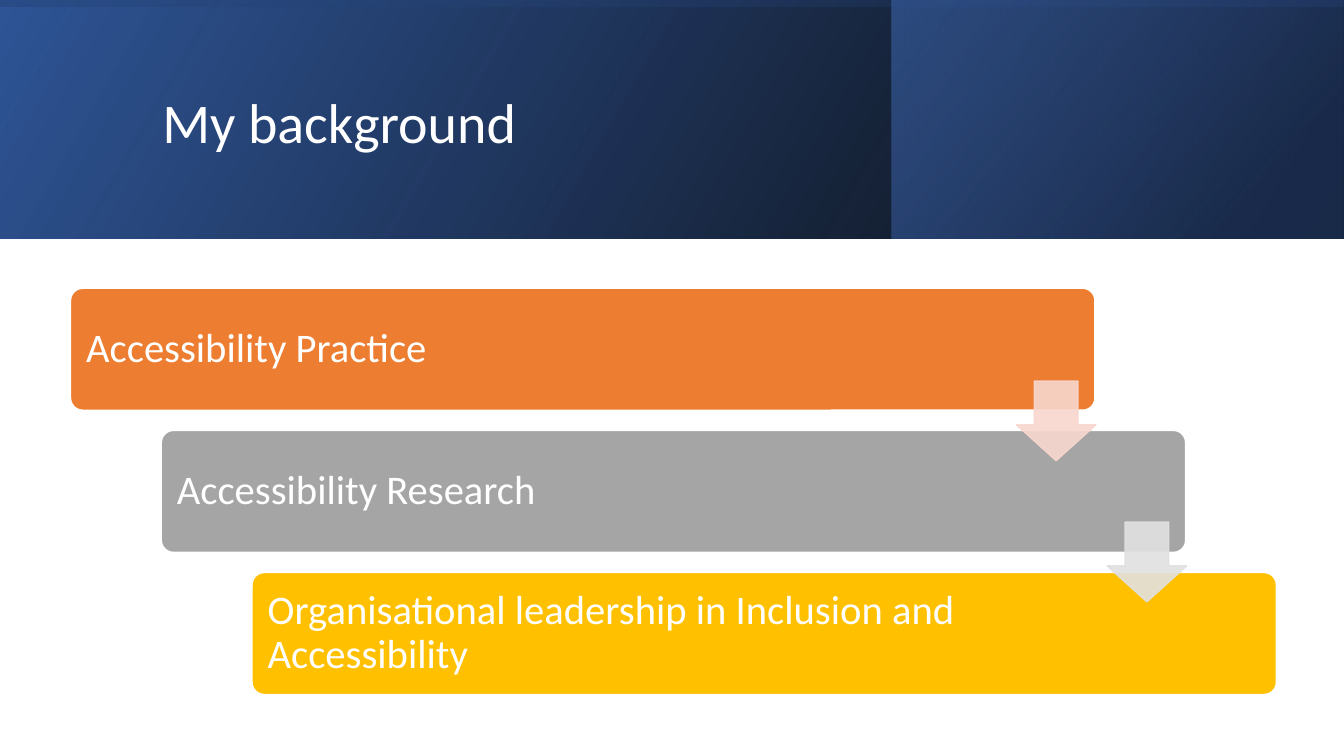
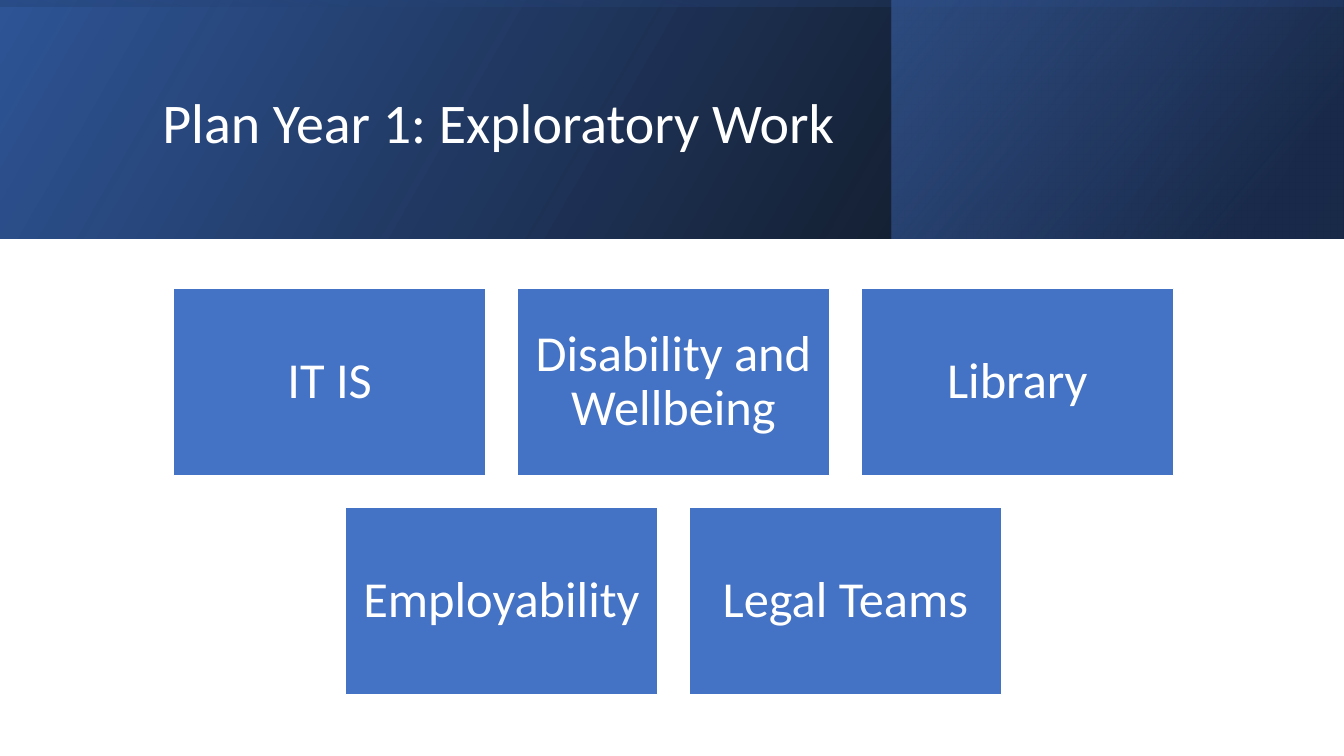
import pptx
import pptx.util
import pptx.dml.color
import pptx.enum.shapes
import pptx.enum.text
import pptx.oxml
import pptx.oxml.ns

Inches = pptx.util.Inches
Pt = pptx.util.Pt
KIND = pptx.enum.shapes.MSO_SHAPE
ALIGN = pptx.enum.text.PP_ALIGN
MIDDLE = pptx.enum.text.MSO_ANCHOR.MIDDLE
qn = pptx.oxml.ns.qn

FONT = "Calibri"
WIDE, HIGH = 13.33, 7.5
BAND = 2.37
COLOURS = {
    "white": "FFFFFF", "black": "000000", "navy": "203864",
    "deep": "2F5597", "blue": "4472C4", "orange": "ED7D31",
    "grey": "A5A5A5", "gold": "FFC000", "peach": "F8D7CE", "pale": "E1E1E1",
}

# Header layers: left, top, width, height, rotation, angle,
# then stops of (position %, colour, opacity %)
LAYERS = [
    (0, 0, WIDE, BAND, 0, 330, [(0, "black", 96), (100, "deep", 100)]),
    (8.84, 0, 4.48, BAND, 0, 320, [(19, "navy", 68), (100, "blue", 48)]),
    ((WIDE - BAND) / 2, (BAND - WIDE) / 2, BAND, WIDE, 270, 350,
     [(23, "deep", 16), (99, "black", 45)]),
]


def rgb(name):
    return pptx.dml.color.RGBColor.from_string(COLOURS[name])


def write(frame, text, size=36, align=ALIGN.LEFT, insets=(0.1, 0.05, 0.1, 0.05)):
    """Fill a text frame; insets run left, top, right, bottom."""
    frame.word_wrap = True
    frame.vertical_anchor = MIDDLE
    (frame.margin_left, frame.margin_top,
     frame.margin_right, frame.margin_bottom) = map(Inches, insets)
    para = frame.paragraphs[0]
    para.alignment = align
    para.line_spacing = 0.9
    run = para.add_run()
    run.text = text
    run.font.size = Pt(size)
    run.font.name = FONT
    run.font.color.rgb = rgb("white")


class Deck:
    def __init__(self):
        self.file = pptx.Presentation()
        self.file.slide_width = Inches(WIDE)
        self.file.slide_height = Inches(HIGH)
        self.slide = None

    def page(self, text):
        """Start a slide with the header layers and its title."""
        self.slide = self.file.slides.add_slide(self.file.slide_layouts[5])
        for layer in LAYERS:
            self.layer(*layer)
        title = self.slide.shapes.title
        title.left, title.top = Inches(1.51), Inches(0.38)
        title.width, title.height = Inches(10.63), Inches(1.72)
        write(title.text_frame, text, size=40)
        # Bring the title in front of the layers
        self.slide.shapes._spTree.append(title._element)

    def shape(self, kind, x, y, w, h, adjust=()):
        item = self.slide.shapes.add_shape(
            kind, Inches(x), Inches(y), Inches(w), Inches(h))
        item.shadow.inherit = False
        for i, value in enumerate(adjust):
            item.adjustments[i] = value
        return item

    def layer(self, x, y, w, h, turn, angle, stops):
        """Draw a mirrored rectangle with a see-through gradient."""
        item = self.shape(KIND.RECTANGLE, x, y, w, h)
        item.rotation = turn
        item.line.fill.background()
        item.fill.background()
        marks = "".join(
            f'<a:gs pos="{pos * 1000}"><a:srgbClr val="{COLOURS[name]}">'
            f'<a:alpha val="{alpha * 1000}"/></a:srgbClr></a:gs>'
            for pos, name, alpha in stops)
        grad = pptx.oxml.parse_xml(
            f'<a:gradFill {pptx.oxml.ns.nsdecls("a")}><a:gsLst>{marks}</a:gsLst>'
            f'<a:lin ang="{angle * 60000}" scaled="0"/></a:gradFill>')
        props = item._element.spPr
        props.replace(props.find(qn("a:noFill")), grad)
        props.find(qn("a:xfrm")).set("flipH", "1")

    def box(self, text, kind, x, y, w, h, fill, adjust=(), **style):
        item = self.shape(kind, x, y, w, h, adjust)
        item.fill.solid()
        item.fill.fore_color.rgb = rgb(fill)
        item.line.color.rgb = rgb("white")
        item.line.width = Pt(1)
        write(item.text_frame, text, **style)

    def arrow(self, x, y, side, fill):
        """Draw a down arrow at 90 % opacity."""
        item = self.shape(KIND.DOWN_ARROW, x, y, side, side, (0.55, 0.45))
        item.fill.solid()
        item.fill.fore_color.rgb = rgb(fill)
        item.line.color.rgb = rgb(fill)
        item.line.width = Pt(1)
        for tint in item._element.spPr.iter(qn("a:srgbClr")):
            tint.append(pptx.oxml.parse_xml(
                f'<a:alpha {pptx.oxml.ns.nsdecls("a")} val="90000"/>'))


def steps(deck):
    deck.page("My background")
    # Staggered bars
    bars = [("Accessibility Practice", "orange"),
            ("Accessibility Research", "grey"),
            ("Organisational leadership in Inclusion and Accessibility", "gold")]
    for i, (text, fill) in enumerate(bars):
        deck.box(text, KIND.ROUNDED_RECTANGLE, 0.7 + 0.9 * i, 2.86 + 1.41 * i,
                 10.16, 1.21, fill, (0.1,), size=29,
                 insets=(0.12, 0.12, 1.8, 0.12))
    # Arrows from bar to bar
    for i, fill in enumerate(["peach", "pale"]):
        deck.arrow(10.08 + 0.9 * i, 3.78 + 1.4 * i, 0.79, fill)


def plan(deck):
    deck.page("Plan Year 1: Exploratory Work")
    # Centred rows of tiles
    rows = [["IT IS", "Disability and Wellbeing", "Library"],
            ["Employability", "Legal Teams"]]
    w, h, gap, mid = 3.1, 1.86, 0.31, 6.68
    for r, row in enumerate(rows):
        left = mid - (len(row) * (w + gap) - gap) / 2
        for c, text in enumerate(row):
            deck.box(text, KIND.RECTANGLE, left + c * (w + gap),
                     2.86 + r * (h + gap), w, h, "blue",
                     align=ALIGN.CENTER, insets=(0.15,) * 4)


def main():
    deck = Deck()
    steps(deck)
    plan(deck)
    deck.file.save("out.pptx")


if __name__ == "__main__":
    main()
